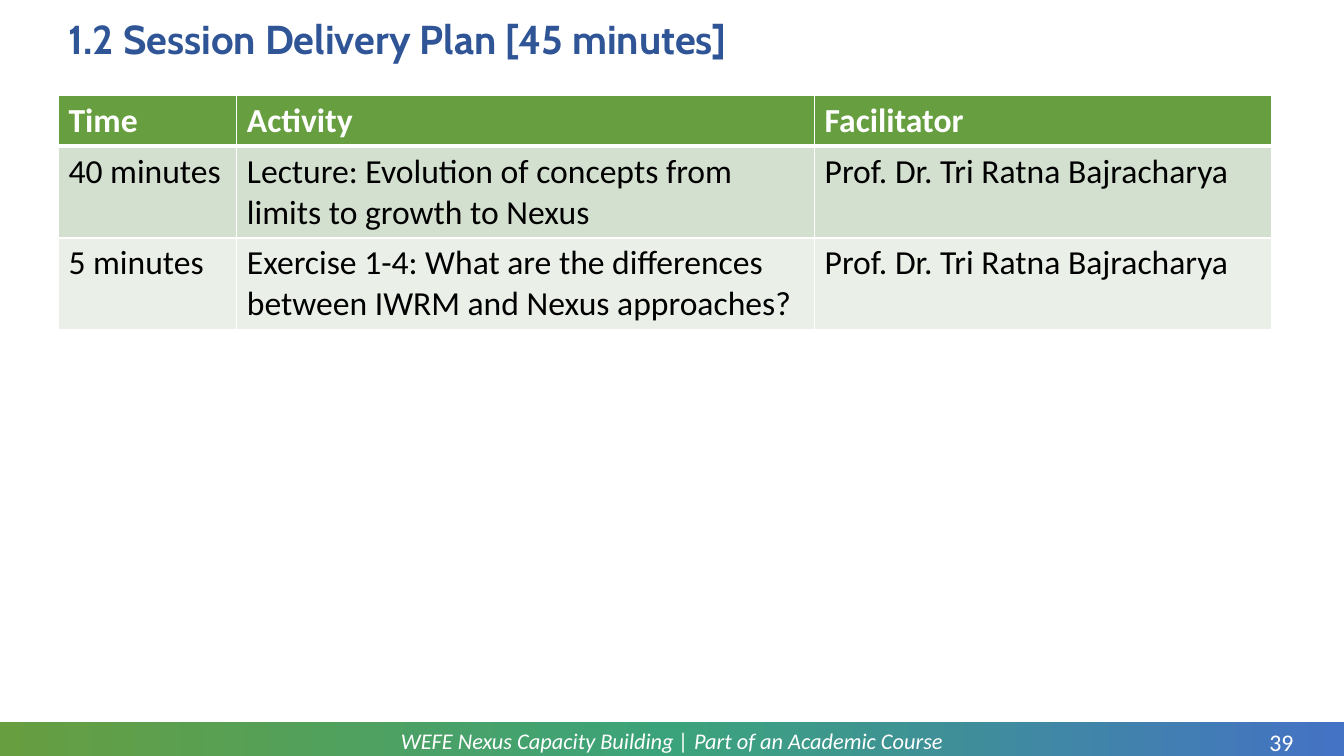
import copy

import pptx
import pptx.dml.color
import pptx.enum.shapes
import pptx.enum.text
import pptx.oxml
import pptx.oxml.ns
import pptx.util

RGBColor = pptx.dml.color.RGBColor
Align = pptx.enum.text.PP_ALIGN
Anchor = pptx.enum.text.MSO_ANCHOR

PX = 9144  # EMU per px, 100 px to the inch
WHITE = RGBColor(0xFF, 0xFF, 0xFF)
BLACK = RGBColor(0x00, 0x00, 0x00)
TITLE_BLUE = RGBColor(0x2F, 0x55, 0x97)
GREEN = RGBColor(0x66, 0x9E, 0x40)
TEAL = RGBColor(0x3B, 0xA3, 0x7B)
BLUE = RGBColor(0x44, 0x72, 0xC4)
BAND_DARK = RGBColor(0xD3, 0xDF, 0xCF)
BAND_LIGHT = RGBColor(0xEA, 0xF0, 0xE8)

COLUMN_WIDTHS = [177, 573, 453]
ROW_HEIGHTS = [49, 91, 91]
ROW_FILLS = [GREEN, BAND_DARK, BAND_LIGHT]
PLAN = [
    ["Time", "Activity", "Facilitator"],
    ["40 minutes",
     "Lecture: Evolution of concepts from limits to growth to Nexus",
     "Prof. Dr. Tri Ratna Bajracharya"],
    ["5 minutes",
     "Exercise 1-4: What are the differences between IWRM and Nexus approaches?",
     "Prof. Dr. Tri Ratna Bajracharya"],
]


def emu(*lengths):
    return [pptx.util.Emu(length * PX) for length in lengths]


def write(frame, text, size, color, font="Calibri", bold=False, italic=False):
    """Put one formatted paragraph in a text frame and return it."""
    frame.text = text
    frame.word_wrap = True
    para = frame.paragraphs[0]
    style = para.runs[0].font
    style.name, style.size = font, pptx.util.Pt(size)
    style.bold, style.italic = bold, italic
    style.color.rgb = color
    return para


def add_title(page, box):
    title = page.shapes.title
    title.left, title.top, title.width, title.height = emu(*box)
    para = write(title.text_frame, "1.2 Session Delivery Plan [45 minutes]",
                 28.8, TITLE_BLUE, font="Cabin", bold=True)
    para.alignment = Align.LEFT
    para.line_spacing = 0.9
    title.text_frame.vertical_anchor = Anchor.MIDDLE
    title.text_frame.auto_size = pptx.enum.text.MSO_AUTO_SIZE.NONE


def set_borders(cell, bottom_points, top_points):
    properties = cell._tc.get_or_add_tcPr()
    widths = {"lnL": 1, "lnR": 1, "lnT": top_points, "lnB": bottom_points}
    for position, (tag, points) in enumerate(widths.items()):
        line = pptx.oxml.parse_xml(
            f'<a:{tag} {pptx.oxml.ns.nsdecls("a")} w="{pptx.util.Pt(points)}">'
            f'<a:solidFill><a:srgbClr val="{WHITE}"/></a:solidFill></a:{tag}>')
        properties.insert(position, line)


def add_plan_table(page, box):
    frame = page.shapes.add_table(len(PLAN), len(COLUMN_WIDTHS), *emu(*box))
    table = frame.table
    for column, width in zip(table.columns, emu(*COLUMN_WIDTHS)):
        column.width = width
    for row, height in zip(table.rows, emu(*ROW_HEIGHTS)):
        row.height = height
    for r, texts in enumerate(PLAN):
        header = r == 0
        for c, text in enumerate(texts):
            cell = table.cell(r, c)
            cell.fill.solid()
            cell.fill.fore_color.rgb = ROW_FILLS[r]
            write(cell.text_frame, text, 24, WHITE if header else BLACK, bold=header)
            set_borders(cell, 3 if header else 1, 3 if r == 1 else 1)


def add_footer(page, box):
    left, top, width, height = box

    # Gradient bar
    bar = page.shapes.add_shape(pptx.enum.shapes.MSO_SHAPE.RECTANGLE, *emu(*box))
    bar.shadow.inherit = False
    bar.line.fill.background()
    bar.fill.gradient()
    bar.fill.gradient_angle = 0
    stop_list = bar._element.spPr.find(".//" + pptx.oxml.ns.qn("a:gsLst"))
    stop_list.insert(1, copy.deepcopy(stop_list[0]))
    for stop, position, color in zip(bar.fill.gradient_stops, (0, 0.5, 1),
                                     (GREEN, TEAL, BLUE)):
        stop.position = position
        stop.color.rgb = color

    # Course name
    course = page.shapes.add_textbox(*emu(left + 92, top + 1, width - 184, 36))
    para = write(course.text_frame,
                 "WEFE Nexus Capacity Building | Part of an Academic Course",
                 16, WHITE, italic=True)
    para.alignment = Align.CENTER
    para.space_after = pptx.util.Pt(8)
    course.text_frame.vertical_anchor = Anchor.MIDDLE

    # Page number
    number = page.shapes.add_textbox(*emu(left + width - 92, top + 6, 60, 29))
    frame = number.text_frame
    frame.margin_left = frame.margin_right = 0
    frame.margin_top = frame.margin_bottom = 0
    write(frame, "39", 17, WHITE).alignment = Align.CENTER


def main():
    deck = pptx.Presentation()
    deck.slide_width, deck.slide_height = emu(1333, 750)
    page = deck.slides.add_slide(deck.slide_layouts.get_by_name("Title Only"))
    add_footer(page, (0, 716, 1333, 34))
    add_title(page, (58, 13, 1215, 56))
    add_plan_table(page, (58, 95, sum(COLUMN_WIDTHS), sum(ROW_HEIGHTS)))
    deck.save("out.pptx")


if __name__ == "__main__":
    main()
